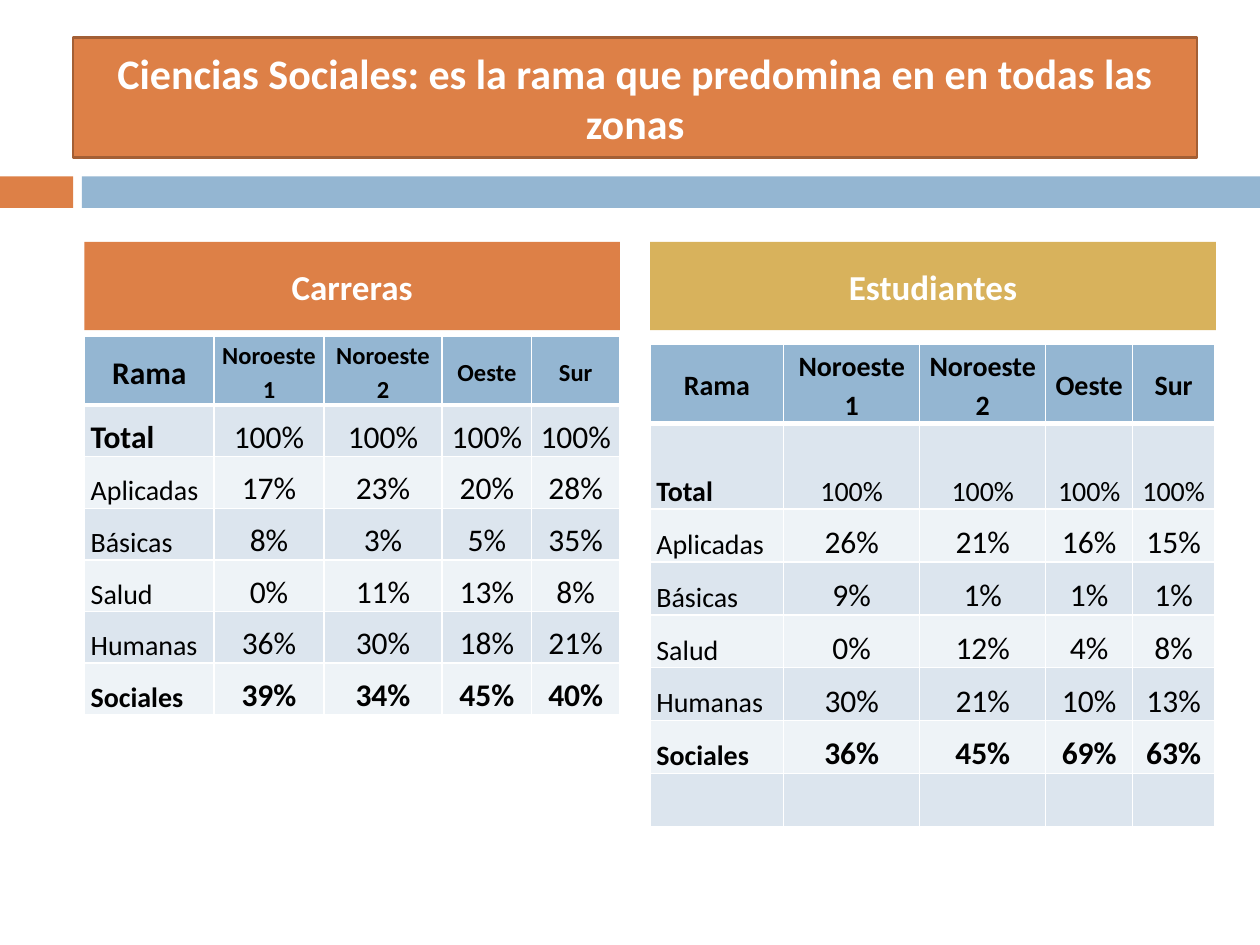
from dataclasses import dataclass

from lxml.etree import SubElement
from pptx import Presentation
from pptx.dml.color import RGBColor
from pptx.enum.shapes import MSO_SHAPE
from pptx.enum.text import MSO_ANCHOR, MSO_AUTO_SIZE, PP_ALIGN
from pptx.oxml.ns import qn
from pptx.util import Inches, Pt


@dataclass(frozen=True)
class Theme:
    """Colours, font and type sizes of the deck."""
    font: str = "Calibri"
    orange: str = "DD8047"
    rust: str = "A35F35"
    blue: str = "94B6D2"
    gold: str = "D8B25C"
    dark: str = "DCE5EE"
    pale: str = "EEF3F7"
    white: str = "FFFFFF"
    black: str = "000000"
    title: int = 24
    head: int = 20
    large: int = 18
    label: int = 16
    small: int = 14


class Deck:
    """Holds the theme and the current slide and draws its elements."""

    def __init__(self, theme, slide):
        self.theme = theme
        self.slide = slide

    def paint(self, item, color):
        """Fill a shape or cell with one colour."""
        item.fill.solid()
        item.fill.fore_color.rgb = RGBColor.from_string(color)

    def label(self, frame, text, size, color, bold=True, align=PP_ALIGN.CENTER):
        """Add one formatted run and return its paragraph."""
        para = frame.paragraphs[0]
        para.alignment = align
        run = para.add_run()
        run.text = text
        font = run.font
        font.name, font.size, font.bold = self.theme.font, Pt(size), bold
        font.color.rgb = RGBColor.from_string(color)
        return para

    def bar(self, left, width, color):
        """Draw one piece of the band under the title."""
        bar = self.slide.shapes.add_shape(
            MSO_SHAPE.RECTANGLE, Inches(left), Inches(1.4), Inches(width), Inches(0.25))
        bar.shadow.inherit = False
        self.paint(bar, color)
        bar.line.fill.background()

    def panel(self, holder, box, text, size, fill, edge=None, before=0):
        """Place a title or body placeholder as a filled panel."""
        holder.left, holder.top, holder.width, holder.height = map(Inches, box)
        self.paint(holder, fill)
        if edge:
            holder.line.color.rgb = RGBColor.from_string(edge)
            holder.line.width = Pt(1.5)
        frame = holder.text_frame
        frame.word_wrap = True
        frame.auto_size = MSO_AUTO_SIZE.NONE
        frame.vertical_anchor = MSO_ANCHOR.MIDDLE
        self.label(frame, text, size, self.theme.white).space_before = Pt(before)

    def edges(self, cell, top, bottom):
        """Give a cell white borders."""
        props = cell._tc.get_or_add_tcPr()
        for side, width in (("L", 1), ("R", 1), ("T", top), ("B", bottom)):
            line = SubElement(props, qn(f"a:ln{side}"), w=str(Pt(width)))
            fill = SubElement(line, qn("a:solidFill"))
            SubElement(fill, qn("a:srgbClr"), val=self.theme.white)

    def cell(self, cell, text, row, col, size):
        """Format and fill one table cell."""
        theme = self.theme
        self.edges(cell, 3 if row == 1 else 1, 3 if row == 0 else 1)
        self.paint(cell, theme.blue if row == 0 else theme.dark if row % 2 else theme.pale)
        cell.margin_left = cell.margin_right = Inches(0.05)
        cell.margin_top = cell.margin_bottom = 0
        cell.vertical_anchor = MSO_ANCHOR.BOTTOM if row else MSO_ANCHOR.MIDDLE
        if text:
            bold = row in (0, 6) or text == "Total"
            align = PP_ALIGN.LEFT if row and col == 0 else PP_ALIGN.CENTER
            para = self.label(cell.text_frame, text, size, theme.black, bold, align)
            para.line_spacing = 1.15

    def table(self, left, top, cols, rows, data, sizes):
        """Draw a table; sizes gives label and value sizes for the first rows."""
        grid = self.slide.shapes.add_table(
            len(rows), len(cols), Inches(left), Inches(top),
            Inches(sum(cols)), Inches(sum(rows))).table
        grid.first_row = grid.horz_banding = False
        for col, width in zip(grid.columns, cols):
            col.width = Inches(width)
        for row, height in zip(grid.rows, rows):
            row.height = Inches(height)
        usual = (self.theme.label, self.theme.large)
        for r, line in enumerate(data):
            pair = sizes[r] if r < len(sizes) else usual
            for c, text in enumerate(line):
                self.cell(grid.cell(r, c), text, r, c, pair[min(c, 1)])


HEAD = ["Rama", "Noroeste 1", "Noroeste 2", "Oeste", "Sur"]
NAMES = ["Total", "Aplicadas", "Básicas", "Salud", "Humanas", "Sociales"]
COURSES = [(100,) * 4, (17, 23, 20, 28), (8, 3, 5, 35),
           (0, 11, 13, 8), (36, 30, 18, 21), (39, 34, 45, 40)]
PUPILS = [(100,) * 4, (26, 21, 16, 15), (9, 1, 1, 1),
          (0, 12, 4, 8), (30, 21, 10, 13), (36, 45, 69, 63)]


def lines(values):
    """Join the header, branch names and percentages into table rows."""
    return [HEAD] + [[name] + [f"{n}%" for n in row] for name, row in zip(NAMES, values)]


def main():
    """Build and save the slide."""
    show = Presentation()
    show.slide_width, show.slide_height = Inches(10), Inches(7.5)
    theme = Theme()
    slide = show.slides.add_slide(show.slide_layouts[4])
    title, left, spare, right, extra = slide.placeholders
    for holder in (spare, extra):
        holder.element.getparent().remove(holder.element)

    deck = Deck(theme, slide)
    deck.bar(0, 0.58, theme.orange)
    deck.bar(0.65, 9.35, theme.blue)
    deck.panel(title, (0.58, 0.3, 8.92, 0.95),
               "Ciencias Sociales: es la rama que predomina en en todas las zonas",
               theme.title, theme.orange, theme.rust)
    deck.panel(left, (0.67, 1.92, 4.25, 0.7), "Carreras",
               theme.head, theme.orange, before=7)
    deck.panel(right, (5.16, 1.92, 4.49, 0.7), "Estudiantes",
               theme.head, theme.gold, before=7)
    deck.table(0.67, 2.67, (1.03, 0.87, 0.94, 0.71, 0.7), [0.41] * 7, lines(COURSES),
               [(theme.large, theme.small), (theme.large, theme.large)])
    deck.table(5.16, 2.73, (1.06, 1.08, 1, 0.69, 0.65), [0.63, 0.68] + [0.42] * 6,
               lines(PUPILS) + [[""] * 5], [(theme.label, theme.label)] * 2)
    show.save("out.pptx")


if __name__ == "__main__":
    main()
